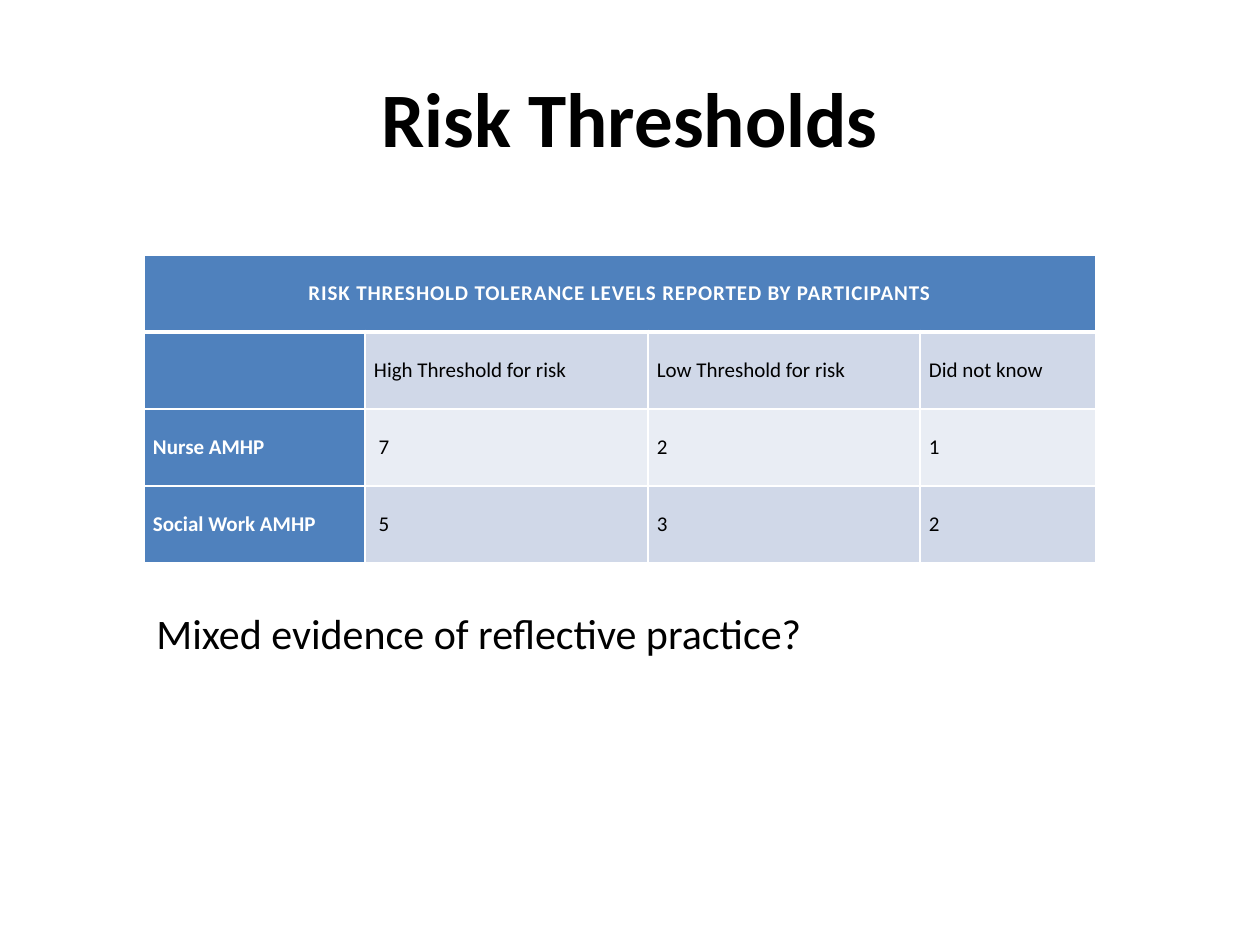
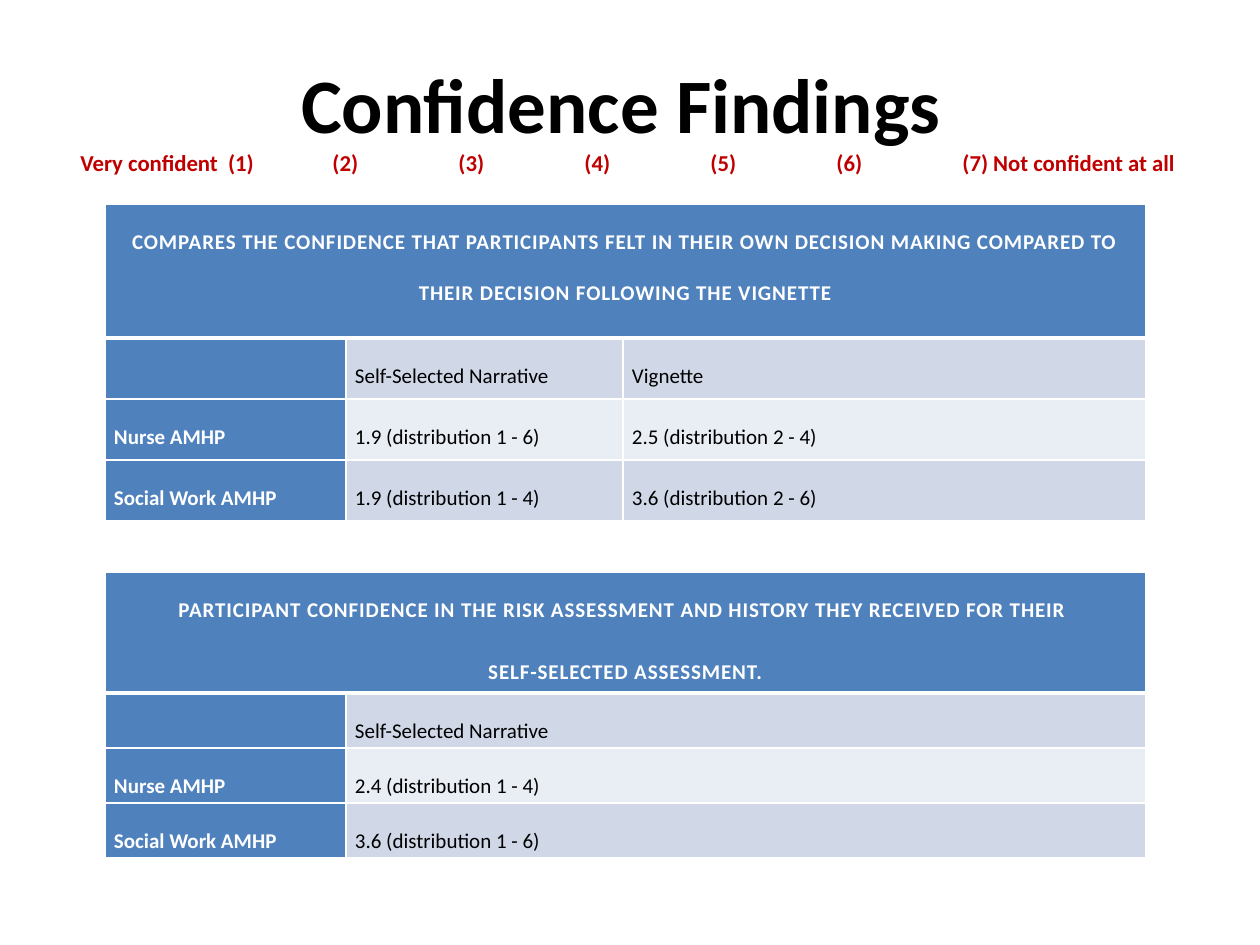
from lxml.etree import SubElement
from pptx import Presentation
from pptx.dml.color import RGBColor as Rgb
from pptx.enum.text import MSO_ANCHOR as Anchor, PP_ALIGN as Align
from pptx.oxml.ns import qn
from pptx.util import Pt

SCALE = 914400 / 126
FONT = "Calibri"
HUES = {
    "ink": "000000", "paper": "FFFFFF", "head": "4F81BD",
    "odd": "D0D8E8", "even": "E9EDF4", "scale": "C00000",
}


def px(n):
    return round(n * SCALE)


class Deck:
    def __init__(self, wide, high):
        self.prs = Presentation()
        self.prs.slide_width, self.prs.slide_height = px(wide), px(high)
        self.slide = None

    def page(self):
        self.slide = self.prs.slides.add_slide(self.prs.slide_layouts[6])

    def style(self, run, size, hue="ink", bold=False):
        font = run.font
        font.name, font.size, font.bold = FONT, Pt(size), bold
        font.color.rgb = Rgb.from_string(HUES[hue])

    def text(self, words, box, size, bold=False):
        frame = self.slide.shapes.add_textbox(*map(px, box)).text_frame
        frame.word_wrap = True
        frame.text = words
        for run in frame.paragraphs[0].runs:
            self.style(run, size, bold=bold)
        return frame

    def title(self, words, sub=""):
        """Centre the title, with an optional small tabbed line below it."""
        frame = self.text(words, (63, 38, 1134, 157), 44, True)
        frame.vertical_anchor = Anchor.MIDDLE
        para = frame.paragraphs[0]
        para.alignment = Align.CENTER
        if sub:
            para.add_line_break()
            run = para.add_run()
            run.text = sub
            self.style(run, 13, "scale", True)
            para._p.get_or_add_pPr().set("defTabSz", str(px(126)))

    def edge(self, cell, row):
        """Draw white borders, thick between the header and the first row."""
        wide = {"lnL": 1, "lnR": 1, "lnT": 3 if row == 1 else 1,
                "lnB": 3 if row == 0 else 1}
        props = cell._tc.get_or_add_tcPr()
        for tag, width in wide.items():
            line = SubElement(props, qn("a:" + tag), w=str(Pt(width)))
            fill = SubElement(line, qn("a:solidFill"))
            SubElement(fill, qn("a:srgbClr"), val=HUES["paper"])

    def cell(self, cell, words, row, col):
        top, dark = row == 0, row == 0 or col == 0
        self.edge(cell, row)
        cell.fill.solid()
        hue = "head" if dark else "odd" if row % 2 else "even"
        cell.fill.fore_color.rgb = Rgb.from_string(HUES[hue])
        cell.margin_left = cell.margin_right = px(9)
        cell.margin_top = cell.margin_bottom = 0
        if not words:
            return
        cell.text_frame.text = words
        for para in cell.text_frame.paragraphs:
            para.alignment = Align.CENTER if top else Align.JUSTIFY
            para.line_spacing = 2.0
            para.space_after = Pt(6 if top else 0)
            for run in para.runs:
                self.style(run, 12, "paper" if dark else "ink", dark)
                if top:
                    run.font._element.set("spc", "50")

    def table(self, head, body, left, top, cols, first, step):
        """Build a table: header row `first` px high, the others `step`."""
        rows = [[head] + [""] * (len(cols) - 1)] + body
        highs = [first] + [step] * len(body)
        grid = self.slide.shapes.add_table(
            len(rows), len(cols), *map(px, (left, top, sum(cols), sum(highs)))
        ).table
        for part, wide in zip(grid.columns, cols):
            part.width = px(wide)
        for part, high in zip(grid.rows, highs):
            part.height = px(high)
        for r, row in enumerate(rows):
            for c, words in enumerate(row):
                self.cell(grid.cell(r, c), words, r, c)
        grid.cell(0, 0).merge(grid.cell(0, len(cols) - 1))


def risk(deck):
    deck.page()
    deck.title("Risk Thresholds")
    deck.table(
        "RISK THRESHOLD TOLERANCE LEVELS REPORTED BY PARTICIPANTS",
        [["", "High Threshold for risk", "Low Threshold for risk",
          "Did not know"],
         ["Nurse AMHP", " 7", "2", "1"],
         ["Social Work AMHP", " 5", "3", "2"]],
        144, 255, (221, 283, 272, 176), 77, 77)
    deck.text("Mixed evidence of reflective practice?",
              (144, 601, 774, 63), 24)


def trust(deck):
    deck.page()
    deck.table(
        "COMPARES THE CONFIDENCE THAT PARTICIPANTS FELT IN THEIR OWN "
        "DECISION MAKING COMPARED TO THEIR DECISION FOLLOWING THE VIGNETTE",
        [["", "Self-Selected Narrative", "Vignette"],
         ["Nurse AMHP", "1.9 (distribution 1 - 6)",
          "2.5 (distribution 2 - 4)"],
         ["Social Work AMHP", "1.9 (distribution 1 - 4)",
          "3.6 (distribution 2 - 6)"]],
        105, 204, (241, 277, 523), 134, 61)
    deck.title("Confidence Findings ",
               "Very confident  (1) \t(2)\t(3)\t(4)\t(5)\t(6)\t"
               "(7) Not confident at all ")
    deck.table(
        "PARTICIPANT CONFIDENCE IN THE RISK ASSESSMENT AND HISTORY THEY "
        "RECEIVED FOR THEIR \nSELF-SELECTED ASSESSMENT.",
        [["", "Self-Selected Narrative"],
         ["Nurse AMHP", "2.4 (distribution 1 - 4)"],
         ["Social Work AMHP", "3.6 (distribution 1 - 6)"]],
        105, 572, (241, 800), 121, 55)


def main():
    deck = Deck(1260, 945)
    risk(deck)
    trust(deck)
    deck.prs.save("out.pptx")


if __name__ == "__main__":
    main()
